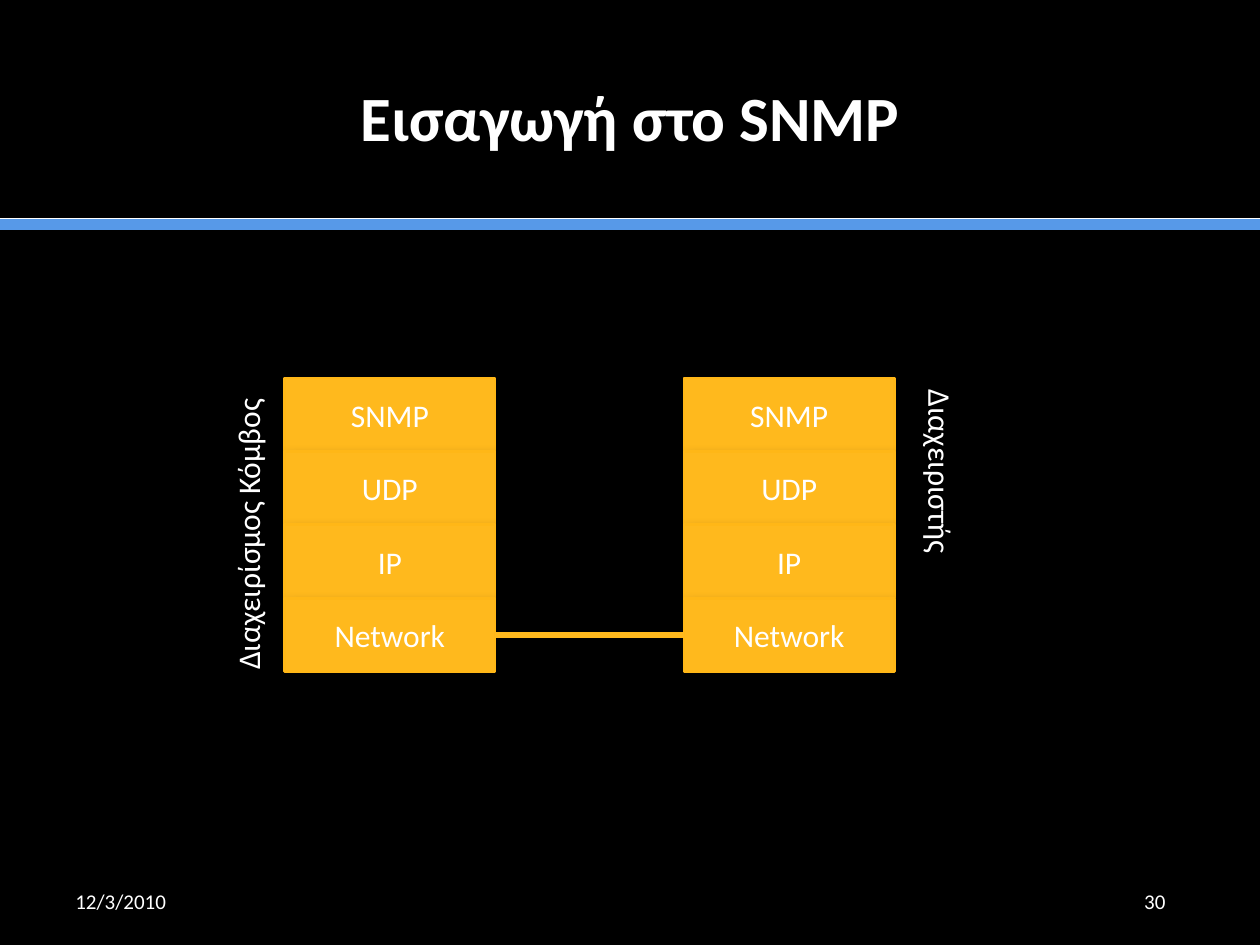
from lxml import etree
from pptx import Presentation
from pptx.dml.color import RGBColor
from pptx.enum.shapes import MSO_CONNECTOR, MSO_SHAPE
from pptx.enum.text import MSO_ANCHOR, PP_ALIGN
from pptx.oxml import parse_xml
from pptx.oxml.ns import nsdecls, qn
from pptx.util import Cm, Pt

STRAIGHT, RECTANGLE = MSO_CONNECTOR.STRAIGHT, MSO_SHAPE.RECTANGLE
TOP, MIDDLE = MSO_ANCHOR.TOP, MSO_ANCHOR.MIDDLE
LEFT, CENTER = PP_ALIGN.LEFT, PP_ALIGN.CENTER

BLACK = RGBColor(0x00, 0x00, 0x00)
WHITE = RGBColor(0xFF, 0xFF, 0xFF)
BLUE = RGBColor(0x57, 0x99, 0xE8)
AMBER = RGBColor(0xFF, 0xB9, 0x1D)
AMBER_EDGE = RGBColor(0xFF, 0xB7, 0x17)

PAGE_WIDTH, PAGE_HEIGHT = 25.4, 19.05
TITLE = "Εισαγωγή στο SNMP"
TITLE_PLACE = (1.27, 0.76, 22.86, 3.18)
LAYERS = ["SNMP", "UDP", "IP", "Network"]
STACK_LEFTS = [5.74, 13.79]
STACK_TOP, LAYER_WIDTH, LAYER_HEIGHT = 7.62, 4.24, 1.48
LINK_Y = 12.8
RULES = [(4.52, BLUE, 7), (4.4, WHITE, 0.5)]
FOOTERS = [
    ("12/3/2010", (1.27, 17.65, 5.92, 1.02), LEFT),
    ("30", (22.43, 17.65, 1.7, 1.02), CENTER),
]
SIDE_LABELS = [
    ("Διαχειρίσμος Κόμβος", (1.5, 9.75, 6.99, 1.02), 270),
    ("Διαχειριστής", (15.47, 10.59, 6.99, 1.02), 90),
]
SHADOW = (
    f'<a:effectLst {nsdecls("a")}>'
    '<a:outerShdw blurRad="101600" dist="63500" dir="4200000" rotWithShape="0">'
    '<a:srgbClr val="000000"><a:alpha val="50000"/></a:srgbClr>'
    '</a:outerShdw></a:effectLst>'
)


def write(shape, text, size, align=CENTER, anchor=MIDDLE, bold=False):
    frame = shape.text_frame
    frame.word_wrap = True
    frame.vertical_anchor = anchor
    para = frame.paragraphs[0]
    para.alignment = align
    span = para.add_run()
    span.text = text
    formats = {"name": "Calibri", "size": Pt(size), "bold": bold}
    for name, value in formats.items():
        setattr(span.font, name, value)
    span.font.color.rgb = WHITE


def add_label(slide, text, place, size, **layout):
    box = slide.shapes.add_textbox(*map(Cm, place))
    write(box, text, size, **layout)
    return box


def add_line(slide, start, end, y, color, width):
    line = slide.shapes.add_connector(STRAIGHT, Cm(start), Cm(y), Cm(end), Cm(y))
    line.line.color.rgb = color
    line.line.width = Pt(width)
    etree.SubElement(line._element.spPr, qn("a:effectLst"))


def add_layer(slide, text, left, top):
    place = (left, top, LAYER_WIDTH, LAYER_HEIGHT)
    box = slide.shapes.add_shape(RECTANGLE, *map(Cm, place))
    box.fill.solid()
    box.fill.fore_color.rgb = AMBER
    box.line.color.rgb = AMBER_EDGE
    box.line.width = Pt(1.5)
    box._element.spPr.append(parse_xml(SHADOW))
    write(box, text, 18)


def main():
    deck = Presentation()
    deck.slide_width, deck.slide_height = Cm(PAGE_WIDTH), Cm(PAGE_HEIGHT)
    slide = deck.slides.add_slide(deck.slide_layouts[5])
    slide.background.fill.solid()
    slide.background.fill.fore_color.rgb = BLACK

    for y, color, width in RULES:
        add_line(slide, 0, PAGE_WIDTH, y, color, width)

    title = slide.shapes.title
    for name, value in zip(("left", "top", "width", "height"), TITLE_PLACE):
        setattr(title, name, Cm(value))
    write(title, TITLE, 36, bold=True)

    for text, place, align in FOOTERS:
        add_label(slide, text, place, 12, align=align)

    for left in STACK_LEFTS:
        for row, text in enumerate(LAYERS):
            add_layer(slide, text, left, STACK_TOP + row * LAYER_HEIGHT)
    add_line(slide, STACK_LEFTS[0] + LAYER_WIDTH, STACK_LEFTS[1], LINK_Y, AMBER, 3)

    for text, place, angle in SIDE_LABELS:
        box = add_label(slide, text, place, 18, align=LEFT, anchor=TOP)
        box.rotation = angle

    deck.save("out.pptx")


if __name__ == "__main__":
    main()
